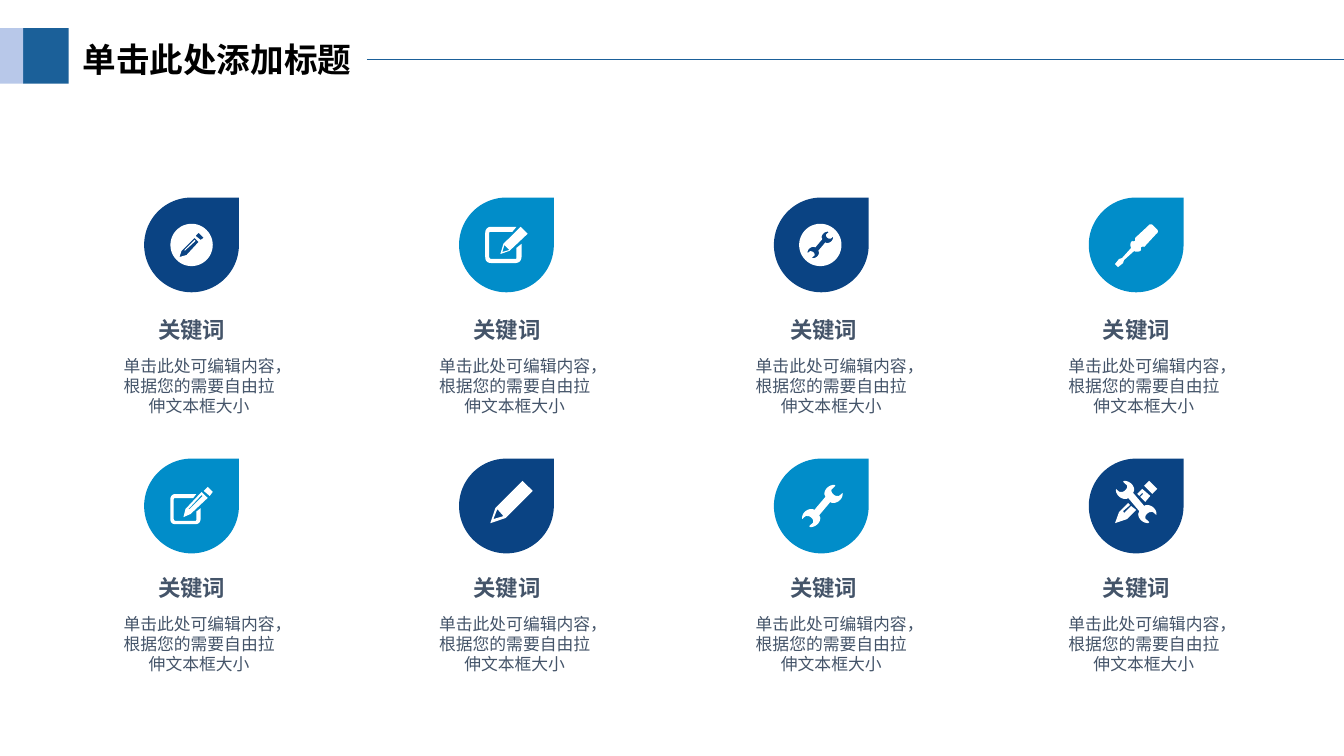
from math import cos, pi, sin

from lxml.etree import SubElement
from pptx import Presentation
from pptx.dml.color import RGBColor
from pptx.enum.shapes import MSO_CONNECTOR, MSO_SHAPE
from pptx.enum.text import MSO_AUTO_SIZE, PP_ALIGN
from pptx.oxml.ns import qn
from pptx.util import Inches, Pt

COLORS = {
    "banner": "1B6099",
    "banner_light": "B8C8E9",
    "navy": "0A4383",
    "azure": "018DC9",
    "white": "FFFFFF",
    "title": "000000",
    "text": "445469",
}
COLUMNS, ROWS = 133.3, 75
ICON_UNITS_PER_CELL = 10

DROP_SIZE = 9.4
DROP_COLUMNS = [14.3 + 31.23 * index for index in range(4)]
DROP_ROWS = [19.6, 45.5]
TEXT_COLUMNS = [6.2, 37.5, 68.9, 99.9]
TEXT_ROWS = [31.4, 57]


def flatten(outline, steps=8):
    points = []
    for entry in outline:
        if len(entry) == 2:
            points.append(entry)
            continue
        x0, y0 = points[-1]
        x1, y1, x2, y2, x3, y3 = entry
        for step in range(1, steps + 1):
            t = step / steps
            weights = ((1 - t) ** 3, 3 * t * (1 - t) ** 2, 3 * t * t * (1 - t), t ** 3)
            points.append((
                sum(w * x for w, x in zip(weights, (x0, x1, x2, x3))),
                sum(w * y for w, y in zip(weights, (y0, y1, y2, y3))),
            ))
    return points


def place(outline, dx=0, dy=0, scale_x=1, scale_y=1):
    return [(dx + x * scale_x, dy + y * scale_y) for x, y in flatten(outline)]


def disc(radius, dx=0, points=48):
    angles = [2 * pi * index / points for index in range(points)]
    return [(dx + radius * cos(a), radius * sin(a)) for a in angles]


WRENCH_HALF = flatten([
    (8, -4), (9, -3, 10, -3, 11, -3), (16, -3, 21, -8, 20, -13),
    (16, -9, 16, -10, 14, -10), (12, -10, 9, -13, 9, -15),
    (9, -17, 9, -16, 13, -20), (12, -21), (7, -21, 2, -17, 2, -12),
    (2, -11, 3, -10, 3, -9),
])
WRENCH = WRENCH_HALF + place(WRENCH_HALF, scale_x=-1, scale_y=-1)

FRAME = [
    (31, -6), (31, -5, 31, -4, 30, -4), (6, -4), (5, -4, 4, -5, 4, -6),
    (4, -30), (4, -31, 5, -31, 6, -31), (27, -31), (31, -36), (6, -36),
    (2, -36, 0, -33, 0, -30), (0, -6), (0, -2, 2, 0, 6, 0),
    (30, 0), (33, 0, 36, -2, 36, -6), (36, -19), (31, -15),
]
SCREWDRIVER = [
    (20, -16), (17, -19), (16, -21, 13, -21, 12, -19), (-1, -7),
    (-1, -6, -1, -5, -1, -4), (-2, -4, -3, -3, -4, -4), (-5, -3),
    (-6, -1, -6, 1, -5, 3), (-14, 13), (-17, 14), (-21, 19), (-18, 22),
    (-13, 18), (-12, 15), (-2, 6), (-1, 7, 2, 7, 4, 6), (5, 5),
    (4, 4, 5, 3, 5, 2), (6, 2, 7, 1, 8, 2), (20, -11),
    (22, -12, 22, -15, 20, -16),
]

ICONS = [
    [
        [disc(21),
         [(-5, 10), (-12, 12), (-10, 6), (3, -7), (7, -3)],
         [(9, -5), (4, -9), (7, -12), (12, -7)]],
        [[(-7, 6), (4, -4), (3, -5), (-7, 5)]],
    ],
    [
        [place(FRAME, -21, 18)],
        [[(-3, -1), (-6, 9), (3, 6), (21, -11), (14, -18)],
         [(3, 5), (-4, 7), (-2, 0)]],
    ],
    [[disc(21, dx=-1), place(WRENCH, dx=-1, scale_x=0.63, scale_y=0.63)]],
    [[SCREWDRIVER]],
    [
        [place(FRAME, -21, 18, 0.83, 0.83)],
        [[(16, -8), (10, -14), (-6, 3), (-8, 11), (-1, 8)],
         [(-2, 3), (-3, 3), (10, -11), (11, -10)]],
        [[(12, -15), (18, -10), (21, -14), (16, -19)]],
    ],
    [
        [[(26, -15), (16, -25), (-11, 2), (-16, 17), (-1, 12)],
         [(-13, 13), (-9, 3), (-3, 10)]],
    ],
    [[place(WRENCH, dx=1)]],
    [
        [[(-5, 0), (-12, 7), (-13, 5), (-6, -1), (-8, -3), (-17, 6),
          (-21, 17), (-9, 13), (0, 4)]],
        [[(3, -10), (6, -13), (7, -12), (4, -9), (9, -4), (14, -10),
          (6, -17), (1, -12)]],
        [[(13, -25), (8, -20), (16, -12), (21, -17)]],
        [place(WRENCH, dy=-4, scale_x=-1)],
    ],
]


class SlideBuilder:
    def __init__(self, presentation):
        self.slide = presentation.slides.add_slide(presentation.slide_layouts[6])
        self.column = presentation.slide_width / COLUMNS
        self.row = presentation.slide_height / ROWS

    def cells(self, *lengths):
        units = (self.column, self.row)
        return [round(length * units[index % 2]) for index, length in enumerate(lengths)]

    def paint(self, shape, color):
        shape.shadow.inherit = False
        shape.fill.solid()
        shape.fill.fore_color.rgb = RGBColor.from_string(COLORS[color])
        shape.line.fill.background()

    def shape(self, kind, box, color):
        self.paint(self.slide.shapes.add_shape(kind, *self.cells(*box)), color)

    def line(self, start, end, color, width=0.75):
        connector = self.slide.shapes.add_connector(
            MSO_CONNECTOR.STRAIGHT, *self.cells(*start, *end))
        connector.line.color.rgb = RGBColor.from_string(COLORS[color])
        connector.line.width = Pt(width)
        SubElement(connector.element.spPr, qn("a:effectLst"))

    def outline(self, contours, center, color):
        paths = [
            [self.cells(center[0] + x / ICON_UNITS_PER_CELL,
                        center[1] + y / ICON_UNITS_PER_CELL)
             for x, y in flatten(contour)]
            for contour in contours
        ]
        builder = self.slide.shapes.build_freeform(*paths[0][0])
        builder.add_line_segments(paths[0][1:], close=True)
        for points in paths[1:]:
            builder.move_to(*points[0])
            builder.add_line_segments(points[1:], close=True)
        self.paint(builder.convert_to_shape(), color)

    def text(self, content, box, size, color="text", font="Arial", bold=False,
             align=PP_ALIGN.CENTER, insets=(0, 0)):
        frame = self.slide.shapes.add_textbox(*self.cells(*box)).text_frame
        frame.word_wrap = True
        frame.auto_size = MSO_AUTO_SIZE.SHAPE_TO_FIT_TEXT
        frame.margin_left = frame.margin_right = Inches(insets[0])
        frame.margin_top = frame.margin_bottom = Inches(insets[1])
        paragraph = frame.paragraphs[0]
        paragraph.alignment = align
        run = paragraph.add_run()
        run.text = content
        run.font.size = Pt(size)
        run.font.bold = bold
        run.font.name = font
        run.font.color.rgb = RGBColor.from_string(COLORS[color])
        SubElement(run.font._element, qn("a:ea"), typeface=font)


def main():
    presentation = Presentation()
    presentation.slide_width = Inches(13.33)
    presentation.slide_height = Inches(7.5)
    builder = SlideBuilder(presentation)

    builder.shape(MSO_SHAPE.RECTANGLE, (2.3, 2.8, 4.5, 5.5), "banner")
    builder.shape(MSO_SHAPE.RECTANGLE, (0, 2.8, 2.3, 5.5), "banner_light")
    builder.text("单击此处添加标题", (7.2, 3.4, 29.1, 5), 24, color="title",
                 font="Noto Sans CJK SC", bold=True, align=PP_ALIGN.LEFT,
                 insets=(0.1, 0.05))
    builder.line((36.4, 5.9), (COLUMNS, 5.9), "banner")

    for index, icon in enumerate(ICONS):
        row, column = divmod(index, 4)
        left, top = DROP_COLUMNS[column], DROP_ROWS[row]
        drop_color = ("navy", "azure")[(row + column) % 2]
        builder.shape(MSO_SHAPE.TEAR, (left, top, DROP_SIZE, DROP_SIZE), drop_color)
        for contours in icon:
            builder.outline(contours, (left + DROP_SIZE / 2, top + DROP_SIZE / 2), "white")

        left, top = TEXT_COLUMNS[column], TEXT_ROWS[row]
        builder.text("关键词", (left, top, 25.6, 2.7), 16, bold=True)
        builder.text("单击此处可编辑内容，根据您的需要自由拉伸文本框大小",
                     (left + 6, top + 3.9, 15.1, 6.1), 12)

    presentation.save("out.pptx")


if __name__ == "__main__":
    main()
